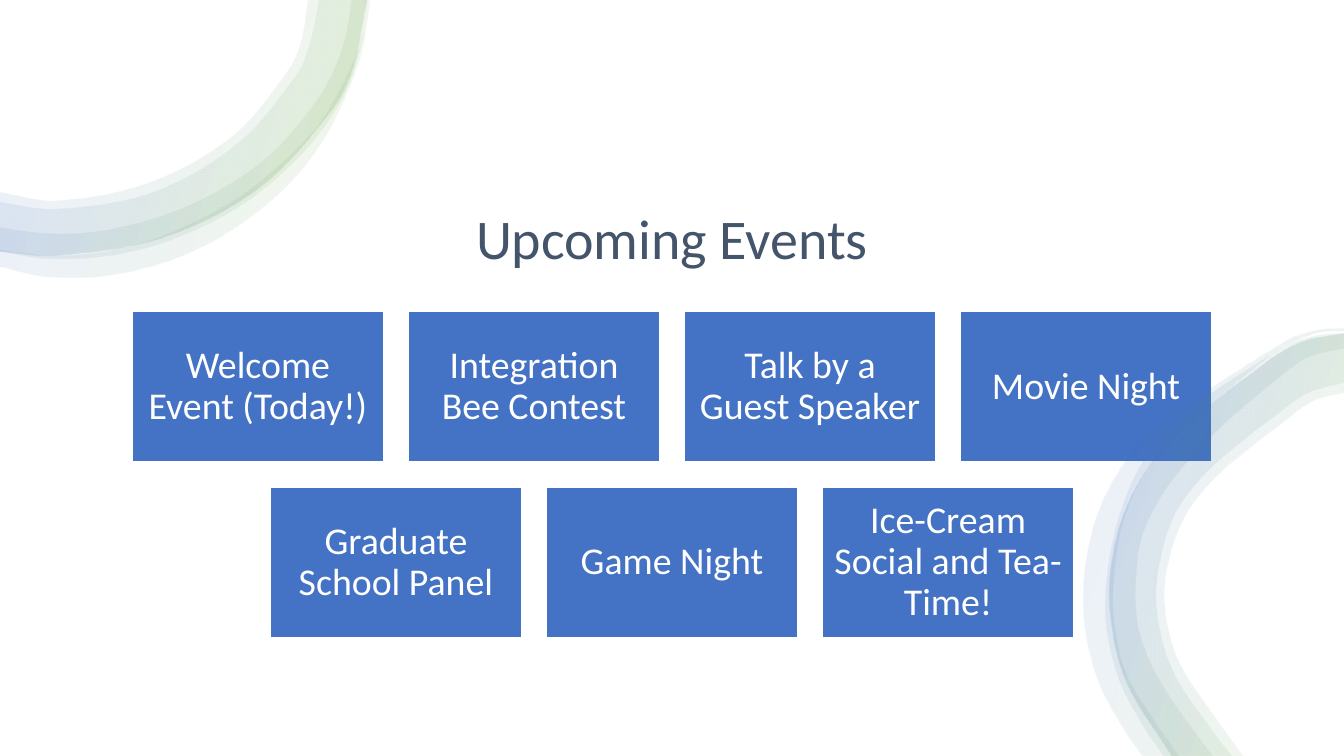
from dataclasses import dataclass
from math import dist

import pptx
import pptx.dml.color
import pptx.enum.shapes
import pptx.enum.text
import pptx.oxml
import pptx.oxml.ns
import pptx.shapes.autoshape
import pptx.slide
import pptx.text.text
import pptx.util

Pt = pptx.util.Pt
Point = tuple[float, float]

WHITE = pptx.dml.color.RGBColor(0xFF, 0xFF, 0xFF)
BLUE = pptx.dml.color.RGBColor(0x44, 0x72, 0xC4)
GREEN = pptx.dml.color.RGBColor(0x70, 0xAD, 0x47)
SLATE = pptx.dml.color.RGBColor(0x44, 0x54, 0x6A)
FONT = "Calibri"

SLIDE_W, SLIDE_H = 960, 540
BOX_W, BOX_H, BOX_GAP = 179.4, 107.6, 17.8
ROWS_TOP, ROW_PITCH = 222.5, 125.5
BOX_INSET = 8

RIBBON_STOPS = [(2, WHITE), (16, GREEN), (85, BLUE), (100, WHITE)]
RIBBON_ALPHA, RIBBON_ANGLE = 10, 200

EVENT_ROWS = [
    ["Welcome Event (Today!)", "Integration Bee Contest",
     "Talk by a Guest Speaker", "Movie Night"],
    ["Graduate School Panel", "Game Night", "Ice-Cream Social and Tea-Time!"],
]


@dataclass(frozen=True)
class Band:
    """One translucent strip of a ribbon, between two curves given in points."""
    outer: list[Point]
    inner: list[Point]
    rotation: int = 0


LEFT_OUTER: list[Point] = [
    (262, 0), (252, 49), (236, 80), (185, 134), (117, 169), (40, 182), (0, 179)]
RIGHT_OUTER: list[Point] = [
    (960, 238), (932, 243), (912, 253), (893, 267), (873, 282), (840, 310),
    (814, 344), (798, 383), (793, 431), (804, 485), (837, 540)]

LEFT_RIBBON = [
    Band(LEFT_OUTER,
         [(220, 0), (215, 30), (206, 50), (166, 97), (107, 130), (40, 143),
          (0, 137)]),
    Band(LEFT_OUTER,
         [(228, 0), (221, 32), (212, 53), (170, 102), (109, 137), (40, 149),
          (0, 144)]),
    Band([(262, 0), (258, 31), (247, 65), (228, 95), (203, 122), (174, 145),
          (141, 163), (106, 176), (69, 183), (32, 184), (0, 179)],
         [(251, 0), (246, 29), (234, 59), (215, 86), (192, 111), (164, 131),
          (133, 147), (101, 158), (67, 165), (32, 166), (0, 162)]),
    Band([(264, 0), (258, 37), (249, 63), (233, 96), (210, 127), (181, 153),
          (148, 174), (111, 189), (71, 197), (31, 197), (0, 190)],
         [(261, 0), (258, 27), (248, 53), (235, 77), (225, 92), (199, 118),
          (171, 140), (139, 158), (105, 172), (69, 180), (32, 182), (0, 178)]),
]
RIGHT_RIBBON = [
    Band([(960, 235), (942, 236), (924, 241), (908, 250), (892, 260),
          (861, 280), (829, 302), (803, 331), (784, 367), (775, 407),
          (775, 448), (785, 488), (804, 523), (816, 540)],
         [(960, 237), (942, 238), (925, 244), (909, 253), (895, 264),
          (873, 282), (852, 300), (839, 312), (816, 341), (802, 374),
          (796, 409), (796, 445), (804, 480), (822, 511), (842, 540)], 90),
    Band([(960, 238), (943, 239), (927, 243), (911, 251), (895, 261),
          (866, 280), (837, 303), (814, 333), (799, 369), (791, 407),
          (790, 446), (799, 485), (816, 518), (831, 540)],
         [(960, 249), (948, 251), (932, 256), (919, 265), (892, 287),
          (878, 299), (855, 322), (834, 347), (818, 376), (812, 401),
          (812, 443), (822, 474), (839, 503), (866, 540)], 90),
    Band(RIGHT_OUTER,
         [(960, 273), (933, 281), (909, 298), (892, 311), (862, 337),
          (841, 364), (830, 395), (826, 431), (837, 477), (866, 522),
          (880, 540)], 90),
    Band(RIGHT_OUTER,
         [(960, 280), (936, 287), (913, 304), (896, 317), (868, 341),
          (848, 366), (836, 396), (832, 431), (842, 472), (872, 518),
          (888, 540)], 90),
]


def turn_back(points: list[Point]) -> list[Point]:
    """Turn an outline a quarter anticlockwise about the centre of its box."""
    xs, ys = zip(*points)
    cx, cy = (min(xs) + max(xs)) / 2, (min(ys) + max(ys)) / 2
    return [(cx + y - cy, cy - x + cx) for x, y in points]


def handle(knot: Point, before: Point, after: Point, reach: float) -> Point:
    """Return the control point on the tangent at a knot."""
    scale = reach / 3 / (dist(before, knot) + dist(knot, after))
    return (knot[0] + (after[0] - before[0]) * scale,
            knot[1] + (after[1] - before[1]) * scale)


def curve_edges(sp: pptx.shapes.autoshape.Shape, outer_count: int) -> None:
    """Make both long edges smooth, leaving the ends of the band straight."""
    qn, ns = pptx.oxml.ns.qn, pptx.oxml.ns.nsdecls("a")
    outline = next(sp._element.iter(qn("a:path")))
    knots = [(int(pt.get("x")), int(pt.get("y")))
             for pt in outline.iter(qn("a:pt"))]
    lines = outline.findall(qn("a:lnTo"))
    for first, last in ((0, outer_count), (outer_count, len(knots))):
        edge = knots[first:last]
        padded = [edge[0], *edge, edge[-1]]
        for i, (a, b, c, d) in enumerate(
                zip(padded, padded[1:], padded[2:], padded[3:])):
            reach = dist(b, c)
            controls = handle(b, a, c, reach), handle(c, d, b, reach), c
            pts = "".join(f'<a:pt x="{round(x)}" y="{round(y)}"/>'
                          for x, y in controls)
            outline.replace(lines[first + i], pptx.oxml.parse_xml(
                f"<a:cubicBezTo {ns}>{pts}</a:cubicBezTo>"))


def fill_ribbon(sp: pptx.shapes.autoshape.Shape, angle: int) -> None:
    stops = "".join(
        f'<a:gs pos="{pos * 1000}"><a:srgbClr val="{color}">'
        f'<a:alpha val="{RIBBON_ALPHA * 1000}"/></a:srgbClr></a:gs>'
        for pos, color in RIBBON_STOPS)
    gradient = pptx.oxml.parse_xml(
        f'<a:gradFill {pptx.oxml.ns.nsdecls("a")} rotWithShape="1">'
        f'<a:gsLst>{stops}</a:gsLst>'
        f'<a:lin ang="{angle * 60000}" scaled="0"/></a:gradFill>')
    sp.fill.background()
    props = sp._element.spPr
    props.replace(props.find(pptx.oxml.ns.qn("a:noFill")), gradient)


def add_band(s: pptx.slide.Slide, band: Band) -> None:
    outline = band.outer + band.inner[::-1]
    if band.rotation:
        outline = turn_back(outline)
    start, *rest = [(Pt(x), Pt(y)) for x, y in outline]
    builder = s.shapes.build_freeform(*start)
    builder.add_line_segments(rest, close=True)
    sp = builder.convert_to_shape()
    curve_edges(sp, len(band.outer))
    sp.rotation = band.rotation
    sp.shadow.inherit = False
    sp.line.fill.background()
    fill_ribbon(sp, RIBBON_ANGLE - band.rotation)


def write(tf: pptx.text.text.TextFrame, text: str, size: float,
          color: pptx.dml.color.RGBColor) -> None:
    tf.word_wrap = True
    tf.auto_size = pptx.enum.text.MSO_AUTO_SIZE.NONE
    p = tf.paragraphs[0]
    p.alignment, p.line_spacing = pptx.enum.text.PP_ALIGN.CENTER, 0.9
    r = p.add_run()
    r.text = text
    r.font.name, r.font.size = FONT, Pt(size)
    r.font.color.rgb = color


def add_title(s: pptx.slide.Slide) -> None:
    sp = s.shapes.title
    sp.left, sp.top, sp.width, sp.height = Pt(93), Pt(125.5), Pt(774), Pt(72)
    sp.text_frame.vertical_anchor = pptx.enum.text.MSO_ANCHOR.BOTTOM
    write(sp.text_frame, "Upcoming Events", 40, SLATE)


def add_box(s: pptx.slide.Slide, left: float, top: float, width: float,
            height: float, color: pptx.dml.color.RGBColor
            ) -> pptx.shapes.autoshape.Shape:
    sp = s.shapes.add_shape(pptx.enum.shapes.MSO_SHAPE.RECTANGLE,
                            Pt(left), Pt(top), Pt(width), Pt(height))
    sp.shadow.inherit = False
    sp.fill.solid()
    sp.fill.fore_color.rgb = color
    sp.line.fill.background()
    return sp


def add_event(s: pptx.slide.Slide, text: str, left: float, top: float) -> None:
    sp = add_box(s, left, top, BOX_W, BOX_H, BLUE)
    sp.line.color.rgb, sp.line.width = WHITE, Pt(1)
    tf = sp.text_frame
    tf.margin_left = tf.margin_right = Pt(BOX_INSET)
    tf.margin_top = tf.margin_bottom = Pt(BOX_INSET)
    tf.vertical_anchor = pptx.enum.text.MSO_ANCHOR.MIDDLE
    write(tf, text, 27, WHITE)


def main() -> None:
    prs = pptx.Presentation()
    prs.slide_width, prs.slide_height = Pt(SLIDE_W), Pt(SLIDE_H)
    s = prs.slides.add_slide(prs.slide_layouts.get_by_name("Title Only"))
    backdrop = add_box(s, 0, 0, SLIDE_W, SLIDE_H, WHITE)
    s.shapes.title._element.addprevious(backdrop._element)
    add_title(s)
    for band in LEFT_RIBBON:
        add_band(s, band)
    pitch = BOX_W + BOX_GAP
    for row, events in enumerate(EVENT_ROWS):
        left = (SLIDE_W - len(events) * pitch + BOX_GAP) / 2
        for col, event in enumerate(events):
            add_event(s, event, left + col * pitch, ROWS_TOP + row * ROW_PITCH)
    for band in RIGHT_RIBBON:
        add_band(s, band)
    prs.save("out.pptx")


if __name__ == "__main__":
    main()
